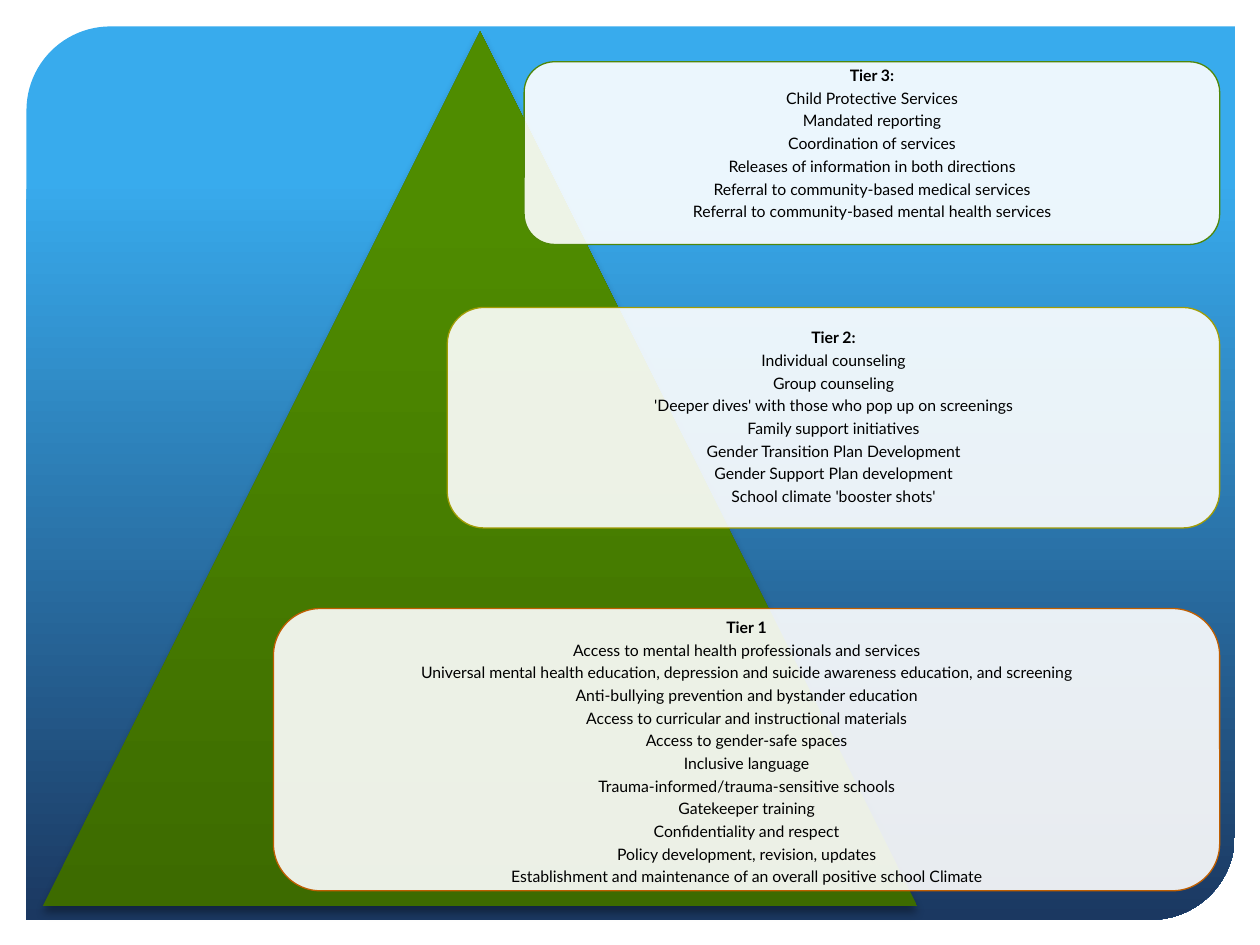
from dataclasses import dataclass

from lxml.etree import SubElement
from pptx import Presentation
from pptx.dml.color import RGBColor
from pptx.enum.shapes import MSO_SHAPE as Preset
from pptx.enum.text import MSO_ANCHOR as Anchor, PP_ALIGN as Align
from pptx.oxml.ns import qn
from pptx.util import Inches, Pt


@dataclass(frozen=True)
class Theme:
    sky: str = "38ABED"
    navy: str = "1B3861"
    moss: str = "3D6B00"
    green: str = "4F8C00"
    card: str = "FFFFFF"
    ink: str = "000000"
    font: str = "Lato"
    body: float = 9
    outline: float = 0.75
    card_opacity: int = 90
    shadow_opacity: int = 35
    line_spacing: float = 0.9
    gap: float = 3.2


@dataclass(frozen=True)
class Box:
    left: float
    top: float
    width: float
    height: float

    def lengths(self):
        return [Inches(n) for n in (self.left, self.top, self.width, self.height)]


@dataclass(frozen=True)
class Tier:
    box: Box
    lead: float
    outline: str
    lines: tuple


THEME = Theme()
TIERS = (
    Tier(Box(4.16, 0.49, 5.52, 1.45), 0.05, "508709", (
        "Tier 3:",
        "Child Protective Services",
        "Mandated reporting",
        "Coordination of services",
        "Releases of information in both directions",
        "Referral to community-based medical services",
        "Referral to community-based mental health services",
    )),
    Tier(Box(3.55, 2.44, 6.13, 1.75), 0.18, "A29D05", (
        "Tier 2:",
        "Individual counseling",
        "Group counseling",
        "'Deeper dives' with those who pop up on screenings",
        "Family support initiatives",
        "Gender Transition Plan Development",
        "Gender Support Plan development",
        "School climate 'booster shots'",
    )),
    Tier(Box(2.17, 4.83, 7.51, 2.24), 0.09, "BF5E00", (
        "Tier 1",
        "Access to mental health professionals and services",
        "Universal mental health education, depression and suicide awareness "
        "education, and screening",
        "Anti-bullying prevention and bystander education",
        "Access to curricular and instructional materials",
        "Access to gender-safe spaces",
        "Inclusive language",
        "Trauma-informed/trauma-sensitive schools",
        "Gatekeeper training",
        "Confidentiality and respect",
        "Policy development, revision, updates",
        "Establishment and maintenance of an overall positive school Climate",
    )),
)


def rgb(color):
    return RGBColor.from_string(color)


def add_alpha(color_element, percent):
    SubElement(color_element, qn("a:alpha"), val=str(percent * 1000))


def add_plain_shape(page, preset, box):
    shape = page.shapes.add_shape(preset, *box.lengths())
    shape.shadow.inherit = False
    shape.line.fill.background()
    return shape


def fill_gradient(shape, stops, angle):
    shape.fill.gradient()
    shape.fill.gradient_angle = angle
    for stop, (position, color) in zip(shape.fill.gradient_stops, stops):
        stop.position = position
        stop.color.rgb = rgb(color)


def add_backdrop(page, box):
    panel = add_plain_shape(page, Preset.ROUND_2_DIAG_RECTANGLE, box)
    panel.adjustments[0] = 0.094
    panel.adjustments[1] = 0
    fill_gradient(panel, ((0.17, THEME.sky), (1, THEME.navy)), 270)


def add_pyramid(page, box):
    pyramid = add_plain_shape(page, Preset.ISOSCELES_TRIANGLE, box)
    fill_gradient(pyramid, ((0, THEME.moss), (0.8, THEME.green)), 90)
    effects = pyramid._element.spPr.find(qn("a:effectLst"))
    shadow = SubElement(effects, qn("a:outerShdw"), blurRad=str(Pt(5)),
                        dist=str(Pt(4)), dir="5400000", rotWithShape="0")
    add_alpha(SubElement(shadow, qn("a:srgbClr"), val=THEME.ink), THEME.shadow_opacity)


def add_tier_text(page, box, lines):
    frame = page.shapes.add_textbox(*box.lengths()).text_frame
    frame.word_wrap = True
    frame.vertical_anchor = Anchor.TOP
    frame.margin_left = frame.margin_right = Inches(0.04)
    frame.margin_top = frame.margin_bottom = 0
    frame.text = "\n".join(lines)
    for index, para in enumerate(frame.paragraphs):
        para.alignment = Align.CENTER
        para.line_spacing = THEME.line_spacing
        para.space_after = Pt(THEME.gap)
        for span in para.runs:
            span.font.name = THEME.font
            span.font.size = Pt(THEME.body)
            span.font.bold = index == 0
            span.font.color.rgb = rgb(THEME.ink)


def add_tier(page, box, tier):
    card = add_plain_shape(page, Preset.ROUNDED_RECTANGLE, box)
    card.fill.solid()
    card.fill.fore_color.rgb = rgb(THEME.card)
    add_alpha(card._element.spPr.find(qn("a:solidFill"))[0], THEME.card_opacity)
    card.line.color.rgb = rgb(tier.outline)
    card.line.width = Pt(THEME.outline)
    pad = 0.05 * box.height
    text_box = Box(box.left + pad, box.top + tier.lead,
                   box.width - 2 * pad, box.height - tier.lead - pad)
    add_tier_text(page, text_box, tier.lines)


def main():
    deck = Presentation()
    deck.slide_width, deck.slide_height = Inches(10), Inches(7.5)
    page = deck.slides.add_slide(deck.slide_layouts[6])
    add_backdrop(page, Box(0.21, 0.21, 9.59, 7.09))
    add_pyramid(page, Box(0.34, 0.25, 6.94, 6.94))
    for tier in TIERS:
        add_tier(page, tier.box, tier)
    deck.save("out.pptx")


if __name__ == "__main__":
    main()
